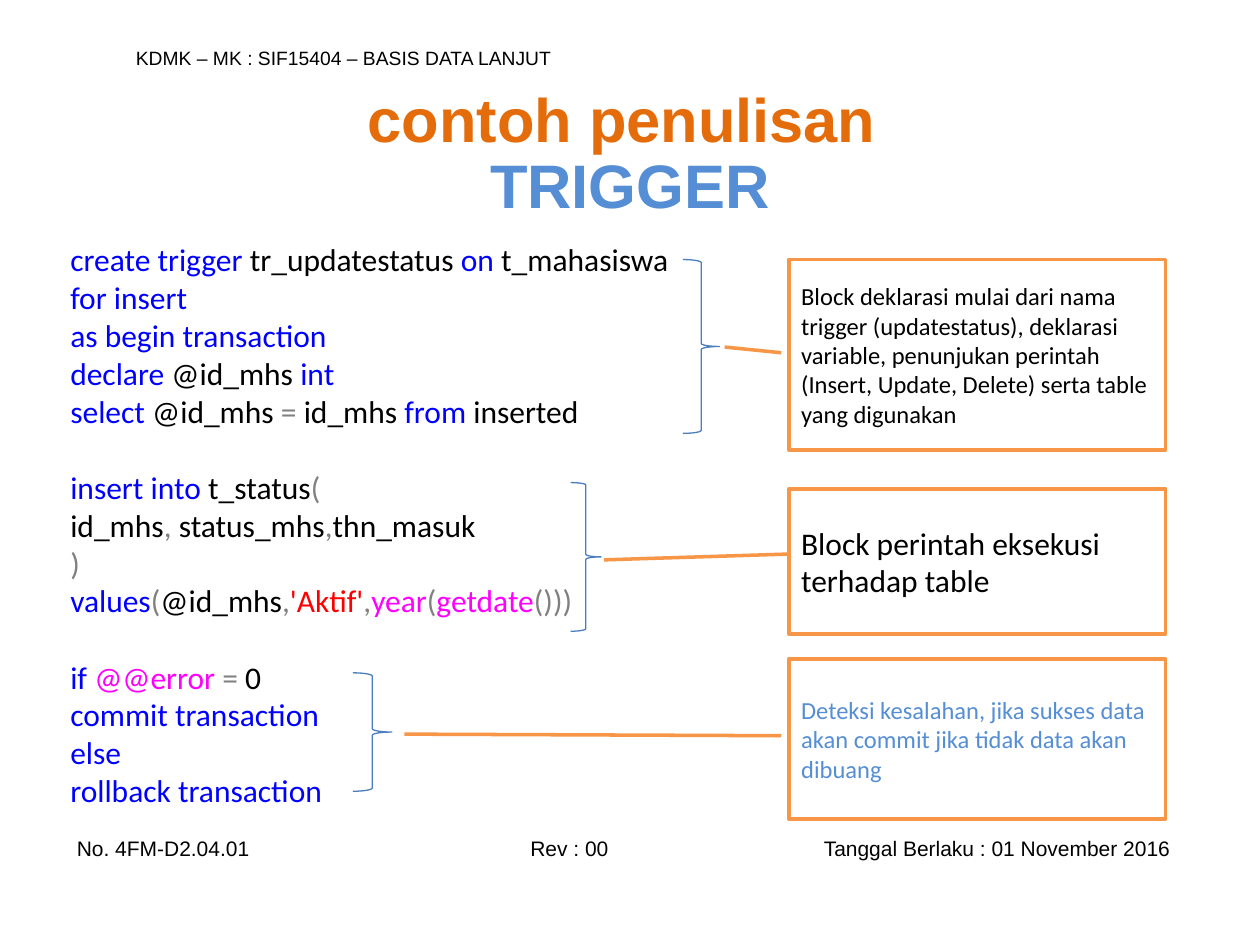
from lxml.etree import SubElement
from pptx import Presentation
from pptx.dml.color import RGBColor
from pptx.enum.shapes import MSO_SHAPE as SHAPE
from pptx.enum.text import MSO_ANCHOR as ANCHOR, PP_ALIGN as ALIGN
from pptx.oxml.ns import qn
from pptx.util import Inches, Pt

COLORS = {"text": "000000", "key": "0000FF", "op": "808080", "func": "FF00FF",
          "string": "FF0000", "orange": "E46C0A", "blue": "558ED5",
          "border": "F79646", "brace": "4B7EBC", "white": "FFFFFF"}

HEADER = "KDMK – MK : SIF15404 – BASIS DATA LANJUT"
FOOTER = ["No. 4FM-D2.04.01", "Rev : 00", "Tanggal Berlaku : 01 November 2016"]
FOOTER_TABS = [(3.91, "ctr"), (8.68, "r")]
TITLE = [[("contoh penulisan ", "orange")], [("TRIGGER", "blue")]]

# Blocks of code lines; each line is a list of (text, colour) runs
CODE = [
    [[("create trigger ", "key"), ("tr_updatestatus ", "text"), ("on ", "key"),
      ("t_mahasiswa", "text")],
     [("for insert", "key")],
     [("as begin transaction", "key")],
     [("declare", "key"), (" @id_mhs ", "text"), ("int", "key")],
     [("select", "key"), (" @id_mhs ", "text"), ("= ", "op"), ("id_mhs ", "text"),
      ("from", "key"), (" inserted", "text")]],
    [[("insert into ", "key"), ("t_status", "text"), ("(", "op")],
     [("id_mhs", "text"), (", ", "op"), ("status_mhs", "text"), (",", "op"),
      ("thn_masuk", "text")],
     [(")", "op")],
     [("values", "key"), ("(", "op"), ("@id_mhs", "text"), (",", "op"),
      ("'Aktif'", "string"), (",", "op"), ("year", "func"), ("(", "op"),
      ("getdate", "func"), ("()))", "op")]],
    [[("if ", "key"), ("@@error ", "func"), ("=", "op"), (" 0", "text")],
     [("commit transaction", "key")],
     [("else", "key")],
     [("rollback transaction", "key")]],
]
BLOCK_GAP = Pt(22)  # one empty 18 pt line

# One row per code block: brace box, callout top and height, pointer, text
NOTES = [
    {"brace": (5.42, 2.06, 0.29, 1.38), "top": 2.06, "height": 1.51,
     "pointer": (0.49, -0.02, 0.46, -0.17), "size": 14, "color": "text",
     "text": "Block deklarasi mulai dari nama trigger (updatestatus), deklarasi "
             "variable, penunjukan perintah (Insert, Update, Delete) serta table "
             "yang digunakan"},
    {"brace": (4.53, 3.83, 0.24, 1.18), "top": 3.88, "height": 1.15,
     "pointer": (0.45, 0, 0.49, -0.49), "size": 18, "color": "text",
     "text": "Block perintah eksekusi terhadap table"},
    {"brace": (2.8, 5.34, 0.31, 0.94), "top": 5.23, "height": 1.27,
     "pointer": (0.48, -0.02, 0.47, -1.02), "size": 14, "color": "blue",
     "text": "Deteksi kesalahan, jika sukses data akan commit jika tidak data "
             "akan dibuang"},
]
NOTE_LEFT, NOTE_WIDTH = 6.26, 2.99


def rgb(name):
    return RGBColor.from_string(COLORS[name])


def write(tf, lines, font, size, bold=False, align=ALIGN.LEFT, anchor=ANCHOR.MIDDLE):
    """Fill a text frame with lines, each a list of (text, colour) runs."""
    tf.word_wrap = True
    tf.vertical_anchor = anchor
    for i, runs in enumerate(lines):
        p = tf.add_paragraph() if i else tf.paragraphs[0]
        p.alignment = align
        for text, color in runs:
            r = p.add_run()
            r.text = text
            r.font.name, r.font.size, r.font.bold = font, Pt(size), bold
            r.font.color.rgb = rgb(color)
    return tf.paragraphs


def add_text(s, box, *args, **kwargs):
    tf = s.shapes.add_textbox(*map(Inches, box)).text_frame
    return tf, write(tf, *args, **kwargs)


def add_outline(s, kind, box, color, width):
    sp = s.shapes.add_shape(kind, *map(Inches, box))
    sp.shadow.inherit = False
    sp.fill.background()
    sp.line.color.rgb = rgb(color)
    sp.line.width = Pt(width)
    return sp


def add_note(s, note):
    add_outline(s, SHAPE.RIGHT_BRACE, note["brace"], "brace", 0.75)
    box = NOTE_LEFT, note["top"], NOTE_WIDTH, note["height"]
    sp = add_outline(s, SHAPE.LINE_CALLOUT_1, box, "border", 2)
    sp.fill.solid()
    sp.fill.fore_color.rgb = rgb("white")
    for i, value in enumerate(note["pointer"]):
        sp.adjustments[i] = value
    write(sp.text_frame, [[(note["text"], note["color"])]], "Calibri", note["size"])


def add_footer(s):
    tf, (p,) = add_text(s, (0.18, 6.58, 9.29, 0.3),
                        [[("\t".join(FOOTER), "text")]], "Arial", 12)
    tf.margin_left = Inches(0.43)
    tabs = SubElement(p._p.get_or_add_pPr(), qn("a:tabLst"))
    for pos, align in FOOTER_TABS:
        SubElement(tabs, qn("a:tab"), pos=str(Inches(pos)), algn=align)


def add_code(s):
    lines = [line for block in CODE for line in block]
    _, paragraphs = add_text(s, (0.46, 1.86, 5, 4.64), lines, "Calibri", 18,
                             anchor=ANCHOR.TOP)
    start = 0
    for block in CODE[:-1]:
        start += len(block)
        paragraphs[start].space_before = BLOCK_GAP


def main():
    prs = Presentation()
    prs.slide_width, prs.slide_height = Inches(10), Inches(7.5)
    s = prs.slides.add_slide(prs.slide_layouts[6])
    add_text(s, (0.98, 0.31, 8.35, 0.29), [[(HEADER, "text")]], "Arial", 11)
    add_footer(s)
    _, title = add_text(s, (0.5, 0.61, 9, 1.25), TITLE, "Arial", 35.1, bold=True,
                        align=ALIGN.CENTER)
    for p in title:
        p.line_spacing = 0.9
    for note in NOTES:
        add_note(s, note)
    add_code(s)
    prs.save("out.pptx")


if __name__ == "__main__":
    main()
